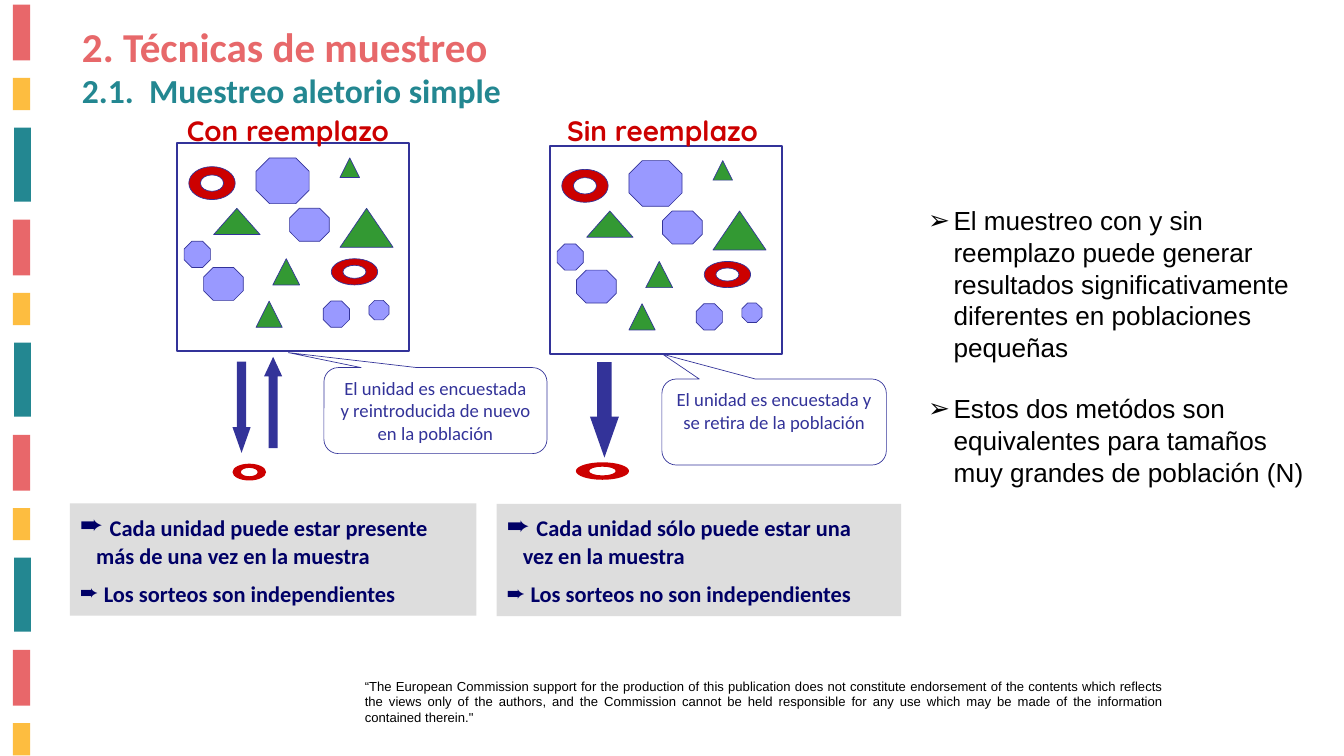
from dataclasses import dataclass
from typing import NamedTuple

from lxml import etree
from pptx import Presentation
from pptx.dml.color import RGBColor
from pptx.enum import shapes as sh, text as tx
from pptx.oxml.ns import qn
from pptx.util import Inches, Pt

KIND = sh.MSO_SHAPE


@dataclass(frozen=True)
class Theme:
    coral: str = "E8676A"
    gold: str = "FDBD40"
    teal: str = "238791"
    head: str = "E7686A"
    red: str = "CC0000"
    green: str = "339933"
    lilac: str = "9999FF"
    blue: str = "333399"
    navy: str = "000066"
    grey: str = "DDDDDD"
    black: str = "000000"
    title: int = 44
    sub: int = 36
    label: int = 30
    list: int = 28
    note: int = 24
    call: int = 20
    foot: int = 14


T = Theme()


class Box(NamedTuple):
    x: float
    y: float
    w: float
    h: float

    def move(self, dx: float, dy: float) -> "Box":
        return Box(self.x + dx, self.y + dy, self.w, self.h)

    def emu(self) -> list:
        return [Inches(v) for v in self]


class Font(NamedTuple):
    name: str
    size: int
    color: str
    bold: bool = False


class Arrow(NamedTuple):
    kind: KIND
    box: Box
    head: float


class Method(NamedTuple):
    label: str
    name: Box
    shift: tuple
    call: Box
    tail: tuple
    said: str
    note: Box
    facts: tuple
    arrows: tuple
    drawn: Box


TREES = [Box(4.06, 3.85, .4, .39), Box(3.18, 3.1, .69, .39), Box(3.81, 4.48, .39, .39),
         Box(5.06, 3.1, .79, .58), Box(5.06, 2.35, .29, .29)]
OCTS = [Box(3.03, 3.98, .59, .49), Box(4.31, 3.1, .59, .49), Box(4.81, 4.48, .39, .39),
        Box(5.49, 4.47, .3, .29), Box(3.81, 2.35, .79, .68), Box(2.74, 3.59, .39, .39)]
RINGS = [Box(4.93, 3.85, .69, .39), Box(2.81, 2.48, .69, .49)]

METHODS = [
    Method("Con reemplazo", Box(2.63, 1.62, 4.28, .66), (0, 0),
           Box(4.82, 5.47, 3.32, 1.28), (-.659, -.674, .167),
           "El unidad es encuestada y reintroducida de nuevo en la población",
           Box(1.04, 7.49, 6.05, 1.67),
           ("Cada unidad puede estar presente más de una vez en la muestra",
            "Los sorteos son independientes"),
           (Arrow(KIND.DOWN_ARROW, Box(3.46, 5.38, .27, 1.36), 1.417),
            Arrow(KIND.UP_ARROW, Box(3.93, 5.31, .27, 1.36), 1.079)),
           Box(3.46, 6.9, .5, .25)),
    Method("Sin reemplazo", Box(8.29, 1.62, 4.69, .66), (5.55, .04),
           Box(9.85, 5.64, 3.34, 1.28), (-.496, -.788, .167),
           "El unidad es encuestada y se retira de la población",
           Box(7.39, 7.5, 6.02, 1.67),
           ("Cada unidad sólo puede estar una vez en la muestra",
            "Los sorteos no son independientes"),
           (Arrow(KIND.DOWN_ARROW, Box(8.78, 5.39, .43, 1.42), 1.417),),
           Box(8.57, 6.88, .79, .26)),
]


def paint(shape, fill: str = "", line: str = "", width: float = .75) -> None:
    shape.shadow.inherit = False
    if fill:
        shape.fill.solid()
        shape.fill.fore_color.rgb = RGBColor.from_string(fill)
    else:
        shape.fill.background()
    if line:
        shape.line.color.rgb = RGBColor.from_string(line)
        shape.line.width = Pt(width)
    else:
        shape.line.fill.background()


def draw(pool, kind: KIND, box: Box, fill: str = "", line: str = "", width: float = .75):
    shape = pool.add_shape(kind, *box.emu())
    paint(shape, fill, line, width)
    return shape


def ring(pool, box: Box, line: str = "") -> None:
    """Draw an oval with a hole of half its width and height, in Bézier curves."""
    k = .5523
    turn = [(-1, 0), (-1, -k), (-k, -1), (0, -1), (k, -1), (1, -k), (1, 0),
            (1, k), (k, 1), (0, 1), (-k, 1), (-1, k), (-1, 0)]

    def oval(part: float, way: int) -> list:
        return [(Inches(box.x + box.w / 2 * (1 + part * x)),
                 Inches(box.y + box.h / 2 * (1 + part * y * way))) for x, y in turn]

    rim, hole = oval(1, 1), oval(.5, -1)
    pen = pool.build_freeform(*rim[0])
    pen.add_line_segments(rim[1:])
    pen.move_to(*hole[0])
    pen.add_line_segments(hole[1:])
    shape = pen.convert_to_shape()
    legs = list(shape._element.iter(qn("a:lnTo")))
    for i in range(0, len(legs), 3):
        curve = etree.Element(qn("a:cubicBezTo"))
        legs[i].addprevious(curve)
        for leg in legs[i:i + 3]:
            curve.append(leg[0])
            leg.getparent().remove(leg)
    paint(shape, T.red, line)


def style(run, font: Font) -> None:
    run.font.name, run.font.size, run.font.bold = font.name, Pt(font.size), font.bold
    run.font.color.rgb = RGBColor.from_string(font.color)


def fit(frame, side: float, top: float) -> None:
    frame.word_wrap = True
    frame.auto_size = tx.MSO_AUTO_SIZE.NONE
    frame.vertical_anchor = tx.MSO_ANCHOR.TOP
    frame.margin_left = frame.margin_right = Inches(side)
    frame.margin_top = frame.margin_bottom = Inches(top)


def write(shape, words: str, font: Font, align=tx.PP_ALIGN.LEFT,
          side: float = .1, top: float = .05) -> None:
    frame = shape.text_frame
    fit(frame, side, top)
    frame.text = words
    for para in frame.paragraphs:
        para.alignment = align
        for run in para.runs:
            style(run, font)


def place(shape, box: Box):
    shape.left, shape.top, shape.width, shape.height = box.emu()
    return shape


def bullet(para, mark: str, color: str, hang: float) -> None:
    props = para._p.get_or_add_pPr()
    props.set("marL", str(Inches(hang)))
    props.set("indent", str(-Inches(hang)))
    tint = etree.SubElement(props, qn("a:buClr"))
    etree.SubElement(tint, qn("a:srgbClr")).set("val", color)
    etree.SubElement(props, qn("a:buFont")).set("typeface", "Arial")
    etree.SubElement(props, qn("a:buChar")).set("char", mark)


def bars(pool) -> None:
    band = [(Box(.19, .07, .26, .83), T.coral), (Box(.19, 1.16, .26, .48), T.gold),
            (Box(.21, 1.9, .25, 1.1), T.teal)]
    for i in range(11):
        box, color = band[i % 3]
        draw(pool, KIND.RECTANGLE, box.move(0, 3.2 * (i // 3)), color)


def crowd(pool, shift: tuple) -> None:
    """Draw the framed population as one group."""
    group = pool.add_group_shape().shapes
    draw(group, KIND.RECTANGLE, Box(2.64, 2.13, 3.45, 3.1).move(*shift), "", T.blue, 2)
    for kind, color, boxes in ((KIND.ISOSCELES_TRIANGLE, T.green, TREES),
                               (KIND.OCTAGON, T.lilac, OCTS)):
        for box in boxes:
            draw(group, kind, box.move(*shift), color, T.blue)
    for box in RINGS:
        ring(group, box.move(*shift), T.blue)


def facts(pool, box: Box, lines: tuple) -> None:
    frame = draw(pool, KIND.RECTANGLE, box, T.grey).text_frame
    fit(frame, .15, .07)
    frame.margin_right = Inches(.3)
    for i, words in enumerate(lines):
        para = frame.add_paragraph() if i else frame.paragraphs[0]
        para.alignment = tx.PP_ALIGN.LEFT
        para.space_before = Pt(12 * i)
        bullet(para, "➨", T.navy, .24)
        for part, size in ((" ", T.note if i else T.label), (words, T.note)):
            run = para.add_run()
            run.text = part
            style(run, Font("Calibri", size, T.navy, True))


def method(pool, m: Method) -> None:
    crowd(pool, m.shift)
    for arrow in m.arrows:
        shape = draw(pool, arrow.kind, arrow.box, T.blue)
        shape.adjustments[1] = arrow.head
    ring(pool, m.drawn)
    call = draw(pool, KIND.ROUNDED_RECTANGULAR_CALLOUT, m.call, "", T.blue)
    for i, value in enumerate(m.tail):
        call.adjustments[i] = value
    write(call, m.said, Font("Calibri", T.call, T.blue), tx.PP_ALIGN.CENTER, .15, .07)
    write(pool.add_textbox(*m.name.emu()), m.label,
          Font("Quicksand", T.label, T.red, True), side=.15, top=.07)
    facts(pool, m.note, m.facts)


def main() -> None:
    deck = Presentation()
    deck.slide_width, deck.slide_height = Inches(20), Inches(11.25)
    slide = deck.slides.add_slide(deck.slide_layouts[1])
    pool = slide.shapes
    bars(pool)
    write(place(pool.title, Box(1.12, .27, 6.77, .84)), "2. Técnicas de muestreo",
          Font("Calibri", T.title, T.head, True))
    sub = pool.add_textbox(*Box(1.12, .99, 10.2, .8).emu())
    write(sub, "2.1.\tMuestreo aletorio simple", Font("Calibri", T.sub, T.teal, True))
    tabs = etree.SubElement(sub.text_frame.paragraphs[0]._p.get_or_add_pPr(), qn("a:tabLst"))
    etree.SubElement(tabs, qn("a:tab"), pos=str(Inches(1)), algn="l")
    for m in METHODS:
        method(pool, m)
    body = place(slide.placeholders[1], Box(13.71, 2.99, 5.9, 4.34))
    write(body, "El muestreo con y sin reemplazo puede generar resultados "
          "significativamente diferentes en poblaciones pequeñas\n"
          "Estos dos metódos son equivalentes para tamaños muy grandes de población (N)",
          Font("Arial", T.list, T.black))
    for i, para in enumerate(body.text_frame.paragraphs):
        para.line_spacing = 1.01
        para.space_before = Pt(32 * i)
        bullet(para, "➢", T.black, .38)
    write(pool.add_textbox(*Box(5.33, 10.04, 12.08, .81).emu()),
          "“The European Commission support for the production of this publication does not "
          "constitute endorsement of the contents which reflects the views only of the authors, "
          "and the Commission cannot be held responsible for any use which may be made of the "
          "information contained therein.\"",
          Font("Arial", T.foot, T.black), tx.PP_ALIGN.JUSTIFY)
    deck.save("out.pptx")


if __name__ == "__main__":
    main()
